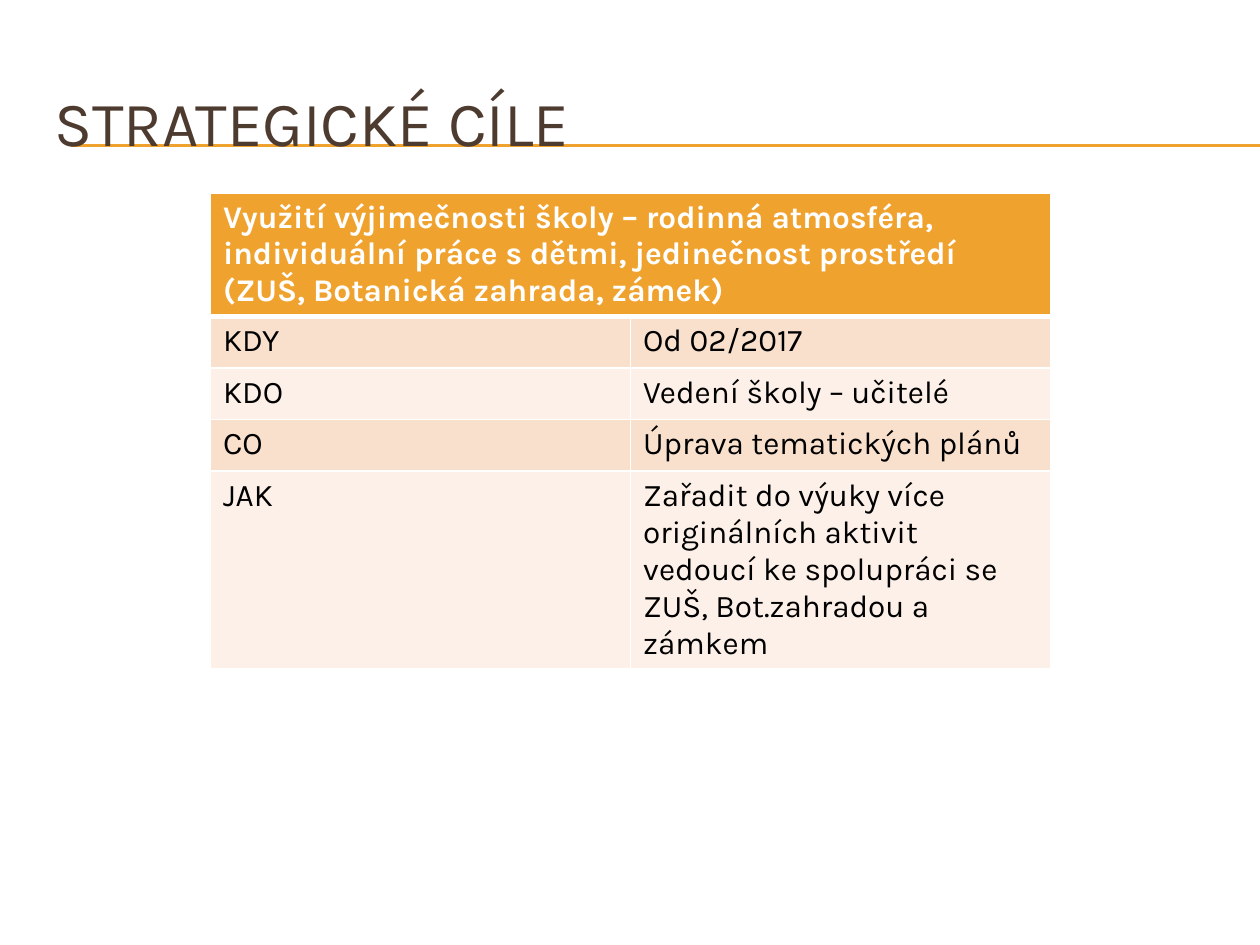
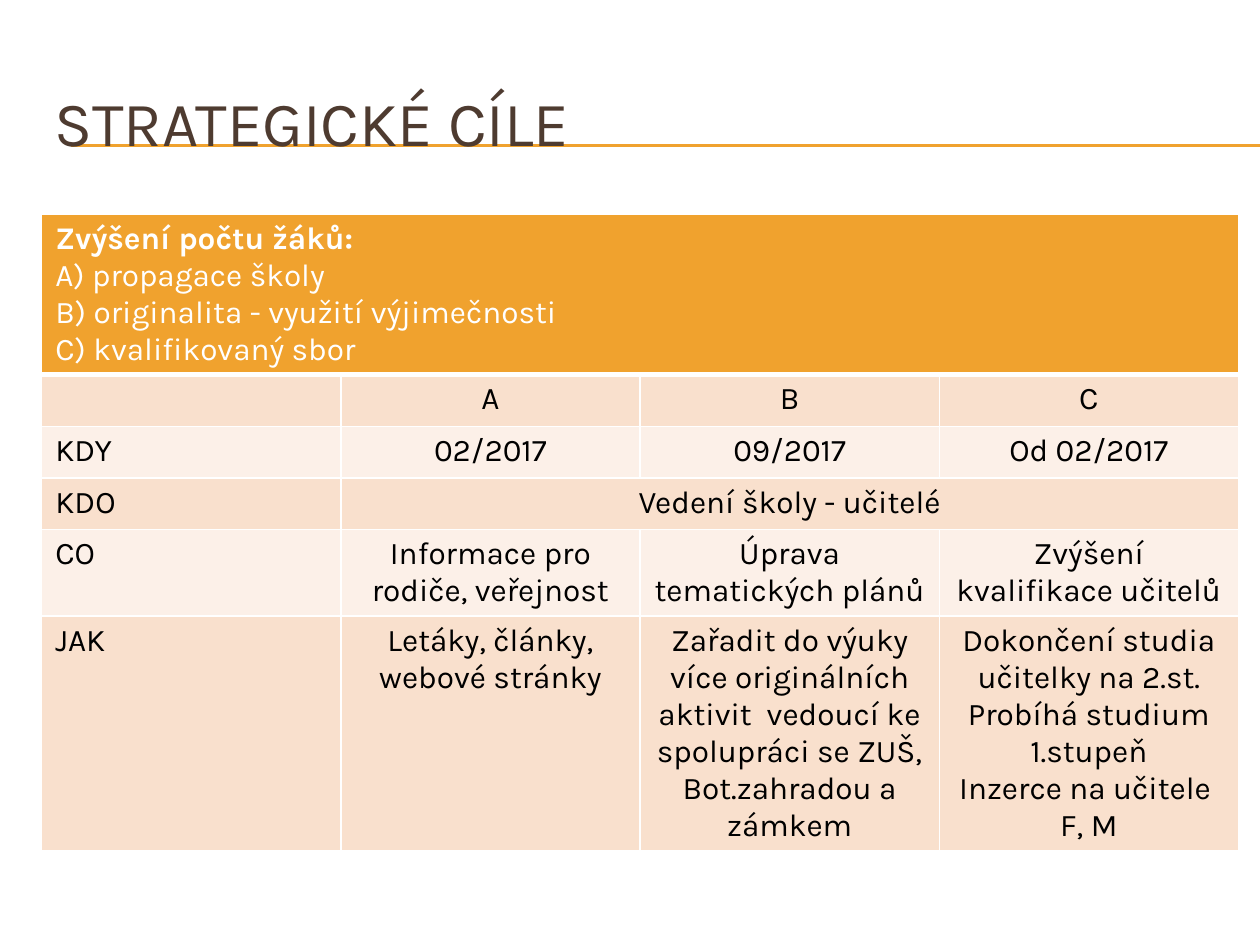
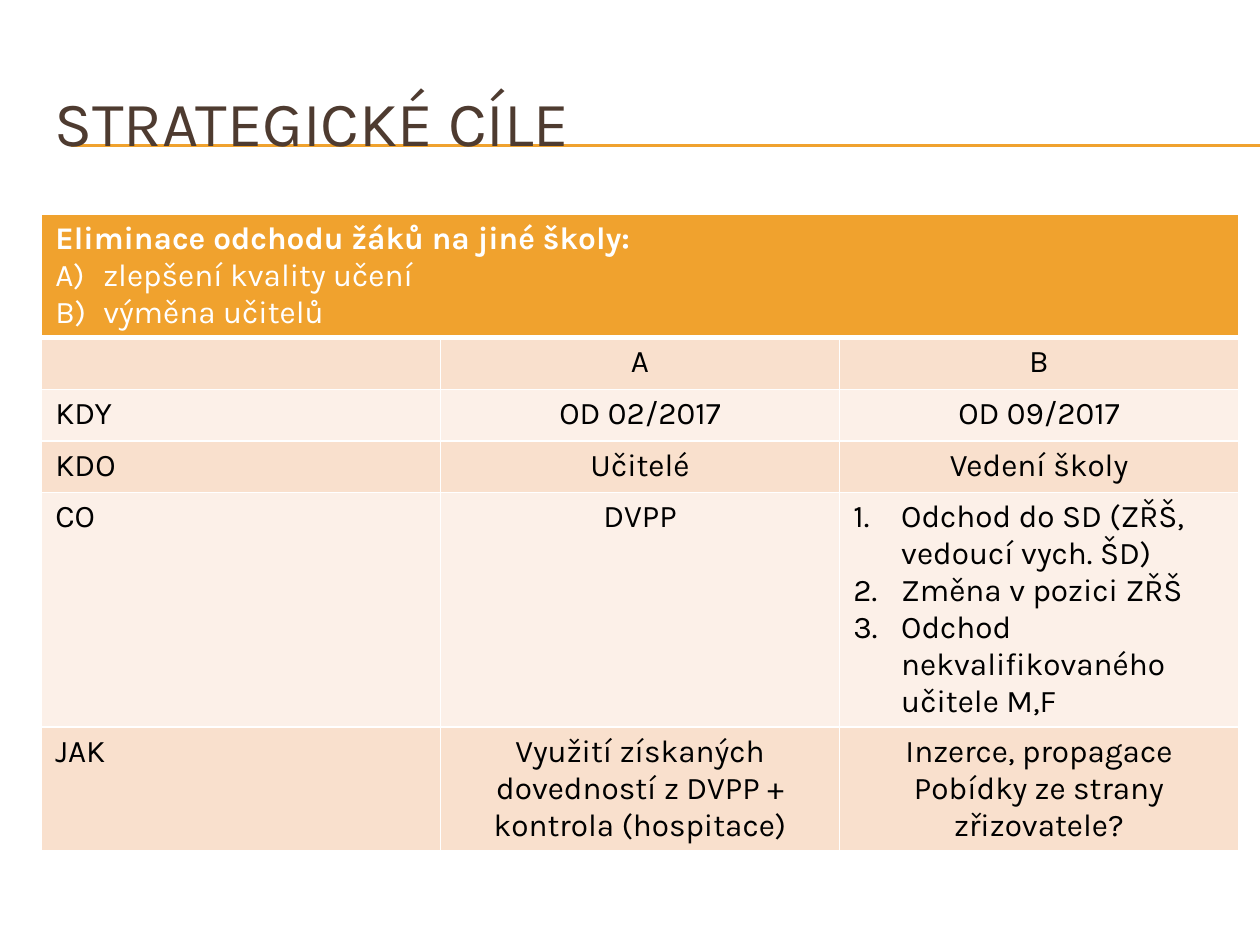
import pptx
import pptx.util
import pptx.dml.color
import pptx.enum.shapes
import pptx.enum.text
import pptx.oxml.ns
import lxml.etree

Inches, Pt = pptx.util.Inches, pptx.util.Pt
ALIGN = pptx.enum.text.PP_ALIGN

# Shared look
FONT = "Karla"
GOLD, BROWN, WHITE, BLACK = "F0A22E", "4E3B30", "FFFFFF", "000000"
BANDS = ["F9E0CD", "FCF0E8"]
TITLE = "STRATEGICKÉ CÍLE"
TITLE_BOX = (0.33, 0.5, 9.5, 0.92)
RULES = [1.15, 1.16]
ROW = 0.41
WIDE = dict(box=(0.33, 1.7, 9.5, 5.12), inset=0.11, align=ALIGN.CENTER)
NARROW = dict(box=(1.67, 1.53, 6.67, 3.52), inset=0.1, align=ALIGN.LEFT)

# Content: a list in a cell holds paragraphs, a tuple adds a numbering style,
# and None continues the cell to its left
PLAN = ("Zařadit do výuky více originálních aktivit  vedoucí ke spolupráci "
        "se ZUŠ, Bot.zahradou a zámkem")
GOALS = [
    dict(NARROW,
         head="Využití výjimečnosti školy – rodinná atmosféra, individuální práce "
              "s dětmi, jedinečnost prostředí (ZUŠ, Botanická zahrada, zámek)",
         points=[],
         rows=[["KDY", "Od 02/2017"],
               ["KDO", "Vedení školy – učitelé"],
               ["CO", "Úprava tematických plánů"],
               ["JAK", PLAN]]),
    dict(WIDE,
         head="Zvýšení počtu žáků:",
         points=["A) propagace školy",
                 "B) originalita - využití výjimečnosti",
                 "C) kvalifikovaný sbor"],
         rows=[["", "A", "B", "C"],
               ["KDY", "02/2017", "09/2017", "Od 02/2017"],
               ["KDO", "Vedení školy - učitelé", None, None],
               ["CO", "Informace pro rodiče, veřejnost",
                "Úprava tematických plánů", "Zvýšení kvalifikace učitelů"],
               ["JAK", "Letáky, články, webové stránky", PLAN,
                ["Dokončení studia učitelky na 2.st.", "Probíhá studium 1.stupeň",
                 "Inzerce na učitele ", "F, M"]]]),
    dict(WIDE,
         head="Eliminace odchodu žáků na jiné školy:",
         points=("alphaUcParenR", ["zlepšení kvality učení", "výměna učitelů"]),
         rows=[["", "A", "B"],
               ["KDY", "OD 02/2017", "OD 09/2017"],
               ["KDO", "Učitelé", "Vedení školy"],
               ["CO", "DVPP",
                ("arabicPeriod", ["Odchod do SD (ZŘŠ, vedoucí vych. ŠD)",
                                  "Změna v pozici ZŘŠ",
                                  "Odchod nekvalifikovaného učitele M,F"])],
               ["JAK", "Využití získaných dovedností z DVPP + kontrola (hospitace)",
                ["Inzerce, propagace", "Pobídky ze strany zřizovatele?"]]]),
]


def rgb(code):
    return pptx.dml.color.RGBColor.from_string(code)


def node(parent, tag, **attrs):
    return lxml.etree.SubElement(parent, pptx.oxml.ns.qn(tag), attrs)


def style(para, size, color, bold=False):
    font = para.font
    font.name, font.size, font.bold = FONT, Pt(size), bold
    font.color.rgb = rgb(color)


def number(para, kind):
    props = para._p.get_or_add_pPr()
    props.set("marL", str(Inches(0.38)))
    props.set("indent", str(-Inches(0.38)))
    node(props, "a:buFont", typeface="+mj-lt")
    node(props, "a:buAutoNum", type=kind)


def write(cell, content, color, align, head=None):
    """Fill a cell with paragraphs, after an optional bold heading."""
    kind, lines = content if isinstance(content, tuple) else (None, content)
    lines = [lines] if isinstance(lines, str) else lines
    texts = ([head] if head else []) + lines
    frame = cell.text_frame
    for i, text in enumerate(texts):
        para = frame.add_paragraph() if i else frame.paragraphs[0]
        para.text = text
        bold = bool(head) and i == 0
        para.alignment = ALIGN.LEFT if kind else align
        if kind and not bold:
            number(para, kind)
        style(para, 18, color, bold)


def border(cell, top, bottom):
    props = cell._tc.get_or_add_tcPr()
    sides = [("a:lnL", 1), ("a:lnR", 1), ("a:lnT", top), ("a:lnB", bottom)]
    for i, (tag, width) in enumerate(sides):
        line = node(props, tag, w=str(Pt(width)))
        node(node(line, "a:solidFill"), "a:srgbClr", val=WHITE)
        props.insert(i, line)


def add_rules(slide):
    """Draw the double rule behind the title."""
    for y in RULES:
        rule = slide.shapes.add_connector(
            pptx.enum.shapes.MSO_CONNECTOR.STRAIGHT,
            Inches(0.56), Inches(y), Inches(10), Inches(y))
        rule.line.color.rgb = rgb(GOLD)
        rule.line.width = Pt(0.75)
        node(rule._element.spPr, "a:effectLst")
        slide.shapes._spTree.insert(2, rule._element)


def add_title(slide):
    title = slide.shapes.title
    title.left, title.top, title.width, title.height = map(Inches, TITLE_BOX)
    frame = title.text_frame
    frame.text = TITLE
    frame.vertical_anchor = pptx.enum.text.MSO_ANCHOR.MIDDLE
    frame.auto_size = pptx.enum.text.MSO_AUTO_SIZE.NONE
    frame.paragraphs[0].alignment = ALIGN.LEFT
    style(frame.paragraphs[0], 36, BROWN)


def add_goal(slide, goal):
    rows, box = goal["rows"], goal["box"]
    count = len(rows[0])
    shape = slide.shapes.add_table(len(rows) + 1, count, *map(Inches, box))
    table = shape.table
    table.first_row = table.horz_banding = False
    for row in table.rows:
        row.height = Inches(ROW)
    shape.height = Inches(box[3])

    # Fills, borders and margins
    for r in range(len(rows) + 1):
        for c in range(count):
            cell = table.cell(r, c)
            cell.fill.solid()
            cell.fill.fore_color.rgb = rgb(BANDS[(r - 1) % 2] if r else GOLD)
            border(cell, 3 if r == 1 else 1, 3 if r == 0 else 1)
            cell.margin_left = cell.margin_right = Inches(goal["inset"])
            cell.margin_top = cell.margin_bottom = Inches(0.05)

    # Heading across the table, then the body
    table.cell(0, 0).merge(table.cell(0, count - 1))
    write(table.cell(0, 0), goal["points"], WHITE, ALIGN.LEFT, goal["head"])
    for r, row in enumerate(rows, 1):
        for c, content in enumerate(row):
            if content is None:
                continue
            end = c
            while end + 1 < count and row[end + 1] is None:
                end += 1
            if end > c:
                table.cell(r, c).merge(table.cell(r, end))
            write(table.cell(r, c), content, BLACK,
                  goal["align"] if c else ALIGN.LEFT)


def main():
    deck = pptx.Presentation()
    deck.slide_width, deck.slide_height = Inches(10), Inches(7.5)
    for goal in GOALS:
        slide = deck.slides.add_slide(deck.slide_layouts[5])
        add_rules(slide)
        add_title(slide)
        add_goal(slide, goal)
    deck.save("out.pptx")


if __name__ == "__main__":
    main()
